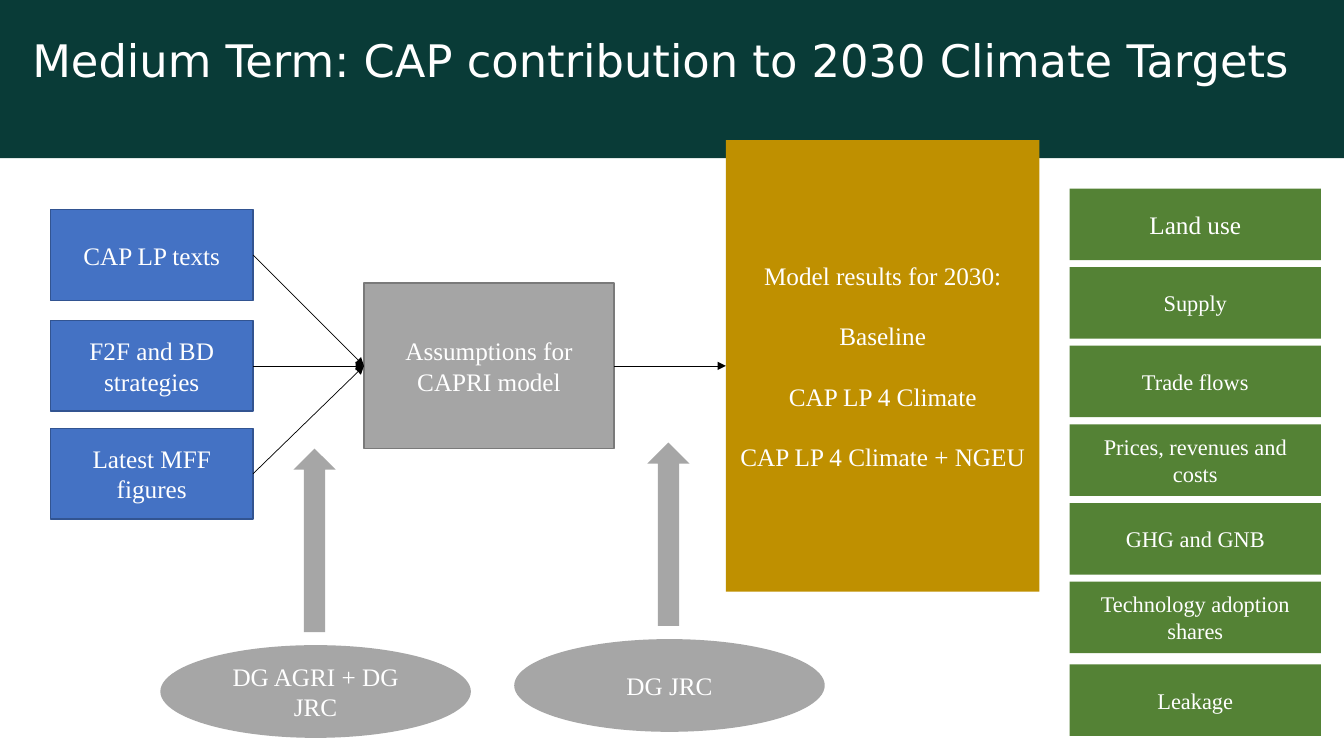
from dataclasses import dataclass
from typing import Optional

from lxml.etree import SubElement
from pptx import Presentation
from pptx.dml.color import RGBColor
from pptx.enum.shapes import MSO_CONNECTOR, MSO_SHAPE
from pptx.enum.text import MSO_ANCHOR, PP_ALIGN
from pptx.oxml.ns import qn
from pptx.util import Inches, Pt

COLORS = {
    "band": "093B37",
    "input": "4472C4",
    "input_line": "325491",
    "model": "A5A5A5",
    "model_line": "7A7A7A",
    "support": "A6A6A6",
    "results": "BF9000",
    "output": "548235",
    "text": "FFFFFF",
    "arrow": "000000",
}
TITLE_FONT = "DejaVu Sans"
BODY_FONT = "Times New Roman"
LEFT_SIDE, RIGHT_SIDE = 1, 3


@dataclass
class Block:
    left: float
    top: float
    width: float
    height: float
    fill: str
    text: str = ""
    line: Optional[str] = None
    size: int = 18
    gap: float = 0
    kind: MSO_SHAPE = MSO_SHAPE.RECTANGLE


def color(name: str) -> RGBColor:
    return RGBColor.from_string(COLORS[name])


def write_text(shape, text: str, *, size: int, font: str = BODY_FONT,
               align=PP_ALIGN.CENTER, anchor=MSO_ANCHOR.MIDDLE,
               gap: float = 0, line_spacing: float = 1.0) -> None:
    frame = shape.text_frame
    frame.word_wrap = True
    frame.vertical_anchor = anchor
    frame.text = text
    for index, paragraph in enumerate(frame.paragraphs):
        paragraph.alignment = align
        paragraph.line_spacing = line_spacing
        paragraph.space_before = Pt(gap if index else 0)
        paragraph.font.name = font
        paragraph.font.size = Pt(size)
        paragraph.font.color.rgb = color("text")


def add_block(slide, block: Block):
    shape = slide.shapes.add_shape(
        block.kind, Inches(block.left), Inches(block.top),
        Inches(block.width), Inches(block.height))
    shape.shadow.inherit = False
    shape.fill.solid()
    shape.fill.fore_color.rgb = color(block.fill)
    if block.line:
        shape.line.color.rgb = color(block.line)
        shape.line.width = Pt(1)
    else:
        shape.line.fill.background()
    if block.text:
        write_text(shape, block.text, size=block.size, gap=block.gap)
    return shape


def add_arrow(slide, source, target) -> None:
    """Join the right side of source to the left side of target."""
    connector = slide.shapes.add_connector(MSO_CONNECTOR.STRAIGHT, 0, 0, 0, 0)
    connector.begin_connect(source, RIGHT_SIDE)
    connector.end_connect(target, LEFT_SIDE)
    connector.line.color.rgb = color("arrow")
    connector.line.width = Pt(0.5)
    SubElement(connector.line._get_or_add_ln(), qn("a:tailEnd"), type="triangle")
    SubElement(connector.element.spPr, qn("a:effectLst"))


def add_support(slide, left: float, top: float, text: str, arrow_left: float) -> None:
    """Draw a supporting service with its upward arrow."""
    add_block(slide, Block(arrow_left, top - 1.95, 0.42, 1.82, "support",
                           kind=MSO_SHAPE.UP_ARROW))
    add_block(slide, Block(left, top, 3.08, 0.92, "support", text,
                           kind=MSO_SHAPE.OVAL))


def main() -> None:
    presentation = Presentation()
    presentation.slide_width = Inches(13.33)
    presentation.slide_height = Inches(7.5)
    slide = presentation.slides.add_slide(presentation.slide_layouts[5])

    # Title on its dark band
    title = slide.shapes.title
    title.left, title.top = Inches(0.22), Inches(0.33)
    title.width, title.height = Inches(12.87), Inches(0.99)
    write_text(title, "Medium Term: CAP contribution to 2030 Climate Targets",
               size=32, font=TITLE_FONT, align=PP_ALIGN.LEFT,
               anchor=MSO_ANCHOR.TOP, line_spacing=0.9)
    band = add_block(slide, Block(0, 0, 13.33, 1.57, "band"))
    title.element.addprevious(band.element)

    # Inputs, model and results
    inputs = [
        add_block(slide, Block(0.5, top, 2.01, 0.9, "input", text, "input_line"))
        for top, text in ((2.08, "CAP LP texts"),
                          (3.18, "F2F and BD strategies"),
                          (4.25, "Latest MFF figures"))
    ]
    model = add_block(slide, Block(3.61, 2.81, 2.48, 1.64, "model",
                                   "Assumptions for CAPRI model", "model_line"))
    scenarios = ("Model results for 2030:", "Baseline", "CAP LP 4 Climate",
                 "CAP LP 4 Climate + NGEU")
    results = add_block(slide, Block(7.2, 1.39, 3.11, 4.48, "results",
                                     "\n".join(scenarios), gap=21.5))

    # Flow from the inputs to the results
    for input_box in inputs:
        add_arrow(slide, input_box, model)
    add_arrow(slide, model, results)

    # Supporting services
    add_support(slide, 1.59, 6.4, "DG AGRI + DG JRC", arrow_left=2.91)
    add_support(slide, 5.1, 6.34, "DG JRC", arrow_left=6.42)

    # Output indicators, the last one set slightly apart
    outputs = ("Land use", "Supply", "Trade flows", "Prices, revenues and costs",
               "GHG and GNB", "Technology adoption shares")
    rows = [(1.87 + 0.78 * index, text) for index, text in enumerate(outputs)]
    for top, text in rows + [(6.59, "Leakage")]:
        add_block(slide, Block(10.61, top, 2.49, 0.71, "output", text,
                               size=18 if text == "Land use" else 16))

    presentation.save("out.pptx")


if __name__ == "__main__":
    main()
